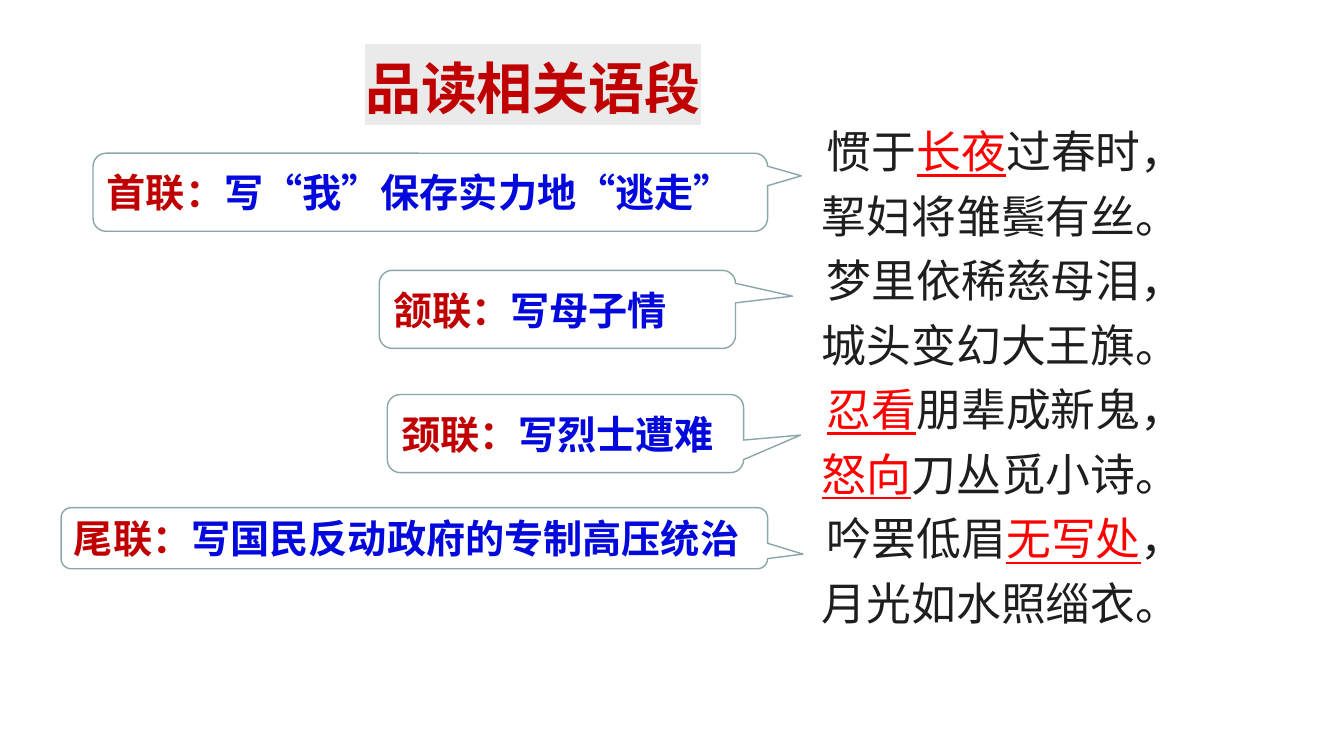
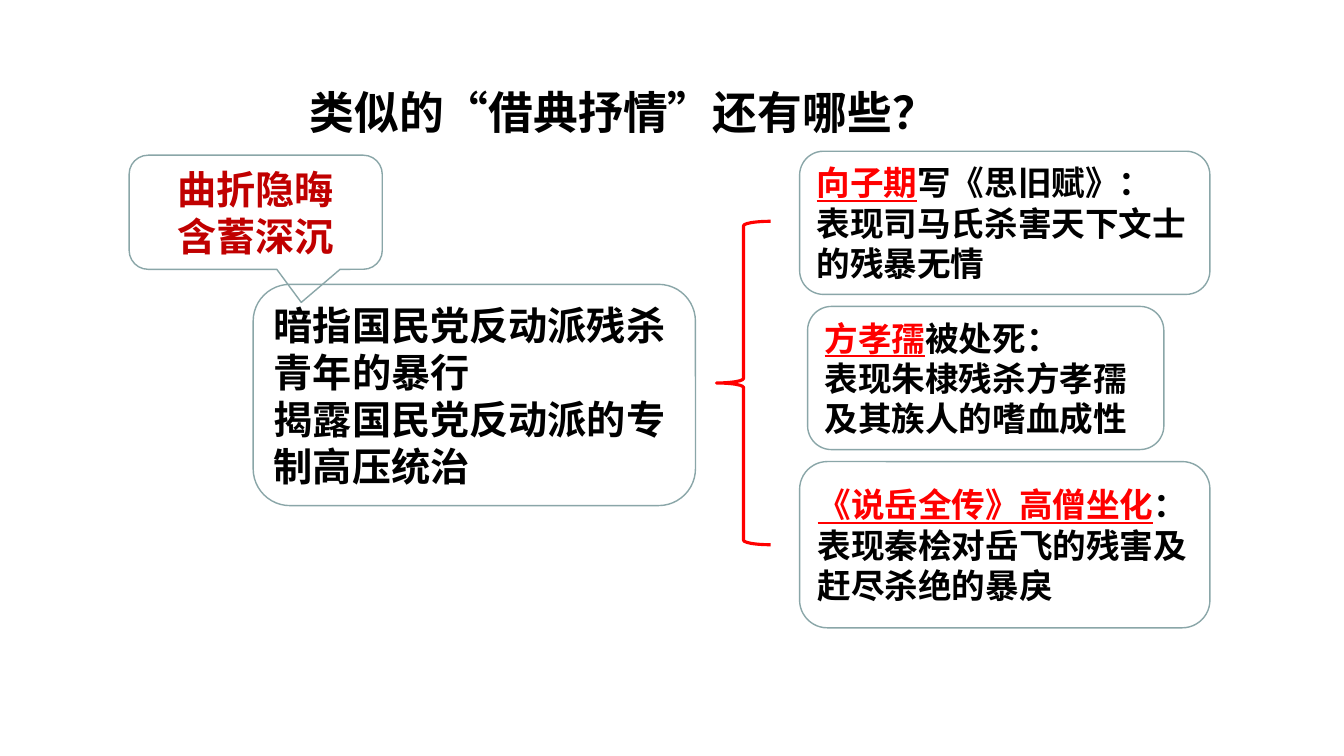
import pptx
import pptx.util
import pptx.dml.color
import pptx.enum.lang
import pptx.enum.shapes
import pptx.enum.text
import pptx.oxml
import pptx.oxml.ns

PX = 9080  # EMU in one px
FONT = "Noto Sans CJK SC"
CRIMSON, RED, BLUE = "C00000", "FF0000", "0309DC"
BLACK, INK, OUTLINE, TITLE_BAND = "000000", "1E1E1E", "8AA6A8", "EAEAEA"

SHAPE = pptx.enum.shapes.MSO_SHAPE
ANCHOR = pptx.enum.text.MSO_ANCHOR
LEFT, CENTER = pptx.enum.text.PP_ALIGN.LEFT, pptx.enum.text.PP_ALIGN.CENTER


def add_item(slide, box, preset=None, adjust=(), line=OUTLINE, width=1):
    """Add an unfilled preset shape, or a text box when no preset is given."""
    place = [v * PX for v in box]
    if preset is None:
        item = slide.shapes.add_textbox(*place)
    else:
        item = slide.shapes.add_shape(preset, *place)
        item.shadow.inherit = False
        item.fill.background()
        item.line.color.rgb = pptx.dml.color.RGBColor.from_string(line)
        item.line.width = pptx.util.Pt(width)
        for i, value in enumerate(adjust):
            item.adjustments[i] = value
        item.text_frame.vertical_anchor = ANCHOR.MIDDLE
    item.text_frame.word_wrap = True
    return item


def write(item, paragraphs, size, bold=True, align=LEFT, spacing=None):
    """Write paragraphs of (text, colour) parts; red parts are underlined."""
    frame = item.text_frame
    for i, parts in enumerate(paragraphs):
        paragraph = frame.add_paragraph() if i else frame.paragraphs[0]
        paragraph.alignment = align
        paragraph.line_spacing = spacing
        for text, colour in parts:
            for j, piece in enumerate(text.split("\n")):
                if j:
                    paragraph.add_line_break()
                if not piece:
                    continue
                run = paragraph.add_run()
                run.text = piece
                run.font.color.rgb = pptx.dml.color.RGBColor.from_string(colour)
                looks = {
                    "name": FONT,
                    "size": pptx.util.Pt(size),
                    "bold": bold,
                    "underline": colour == RED,
                    "language_id": pptx.enum.lang.MSO_LANGUAGE_ID.SIMPLIFIED_CHINESE,
                }
                for key, value in looks.items():
                    setattr(run.font, key, value)
                latin = run._r.rPr.find(pptx.oxml.ns.qn("a:latin"))
                latin.addnext(pptx.oxml.parse_xml(
                    f'<a:ea {pptx.oxml.ns.nsdecls("a")} typeface="{FONT}"/>'))


deck = pptx.Presentation()
deck.slide_width, deck.slide_height = 1343 * PX, 755 * PX
blank = deck.slide_layouts[6]

# Slide 1: the poem and its four couplets
poem_slide = deck.slides.add_slide(blank)
heading = add_item(poem_slide, (330, 48, 405, 78))
write(heading, [[("品读相关语段", CRIMSON)]], 40, align=CENTER)
heading_run = heading.text_frame.paragraphs[0].runs[0]._r
heading_run.rPr.find(pptx.oxml.ns.qn("a:latin")).addprevious(pptx.oxml.parse_xml(
    f'<a:highlight {pptx.oxml.ns.nsdecls("a")}><a:srgbClr val="{TITLE_BAND}"/></a:highlight>'))

couplets = [
    ("首联：", "写“我”保存实力地“逃走”", (93, 153, 674, 78), (0.55, -0.21)),
    ("颔联：", "写母子情", (379, 270, 356, 78), (0.66, -0.17)),
    ("颈联：", "写烈士遭难", (387, 394, 356, 78), (0.66, 0.02)),
    ("尾联：", "写国民反动政府的专制高压统治", (61, 507, 706, 61), (0.55, 0.26)),
]
for couplet, meaning, box, tip in couplets:
    callout = add_item(poem_slide, box, SHAPE.ROUNDED_RECTANGULAR_CALLOUT, tip)
    write(callout, [[(couplet, CRIMSON), (meaning, BLUE)]], 28)

poem = [
    [("惯于", INK), ("长夜", RED), ("过春时，", INK)],
    [("挈妇将雏鬓有丝。 \n梦里依稀慈母泪，", INK)],
    [("城头变幻大王旗。 \n", INK), ("忍看", RED), ("朋辈成新鬼，", INK)],
    [("怒向", RED), ("刀丛觅小诗。 \n吟罢低眉", INK), ("无写处", RED), ("，", INK)],
    [("月光如水照缁衣。 ", INK)],
]
write(add_item(poem_slide, (807, 108, 397, 526)), poem, 32,
      bold=False, align=CENTER, spacing=1.2)

# Slide 2: allusions that carry the same feeling
allusion_slide = deck.slides.add_slide(blank)
question = add_item(allusion_slide, (131, 69, 955, 66))
write(question, [[("类似的“借典抒情”还有哪些？", BLACK)]], 32, align=CENTER, spacing=1.2)
question.text_frame.paragraphs[0]._p.get_or_add_pPr().set("indent", str(29 * PX))

panels = [
    ((799, 151, 410, 143), 24, [[("向子期", RED), ("写《思旧赋》：", BLACK)],
                                [("表现司马氏杀害天下文士的残暴无情", BLACK)]]),
    ((807, 306, 356, 143), 24, [[("方孝孺", RED), ("被处死：", BLACK)],
                                [("表现朱棣残杀方孝孺及其族人的嗜血成性", BLACK)]]),
    ((799, 461, 410, 166), 24, [[("《说岳全传》高僧坐化", RED),
                                 ("：表现秦桧对岳飞的残害及赶尽杀绝的暴戾", BLACK)]]),
    ((253, 284, 442, 221), 28, [[("暗指国民党反动派残杀青年的暴行", BLACK)],
                                [("揭露国民党反动派的专制高压统治", BLACK)]]),
]
for box, size, paragraphs in panels:
    write(add_item(allusion_slide, box, SHAPE.ROUNDED_RECTANGLE), paragraphs, size)

manner = add_item(allusion_slide, (129, 155, 253, 114),
                  SHAPE.ROUNDED_RECTANGULAR_CALLOUT, (0.18, 0.79))
write(manner, [[("曲折隐晦", CRIMSON)], [("含蓄深沉", CRIMSON)]], 28, align=CENTER)
add_item(allusion_slide, (716, 221, 54, 323), SHAPE.LEFT_BRACE, line=RED, width=2.25)

deck.save("out.pptx")
